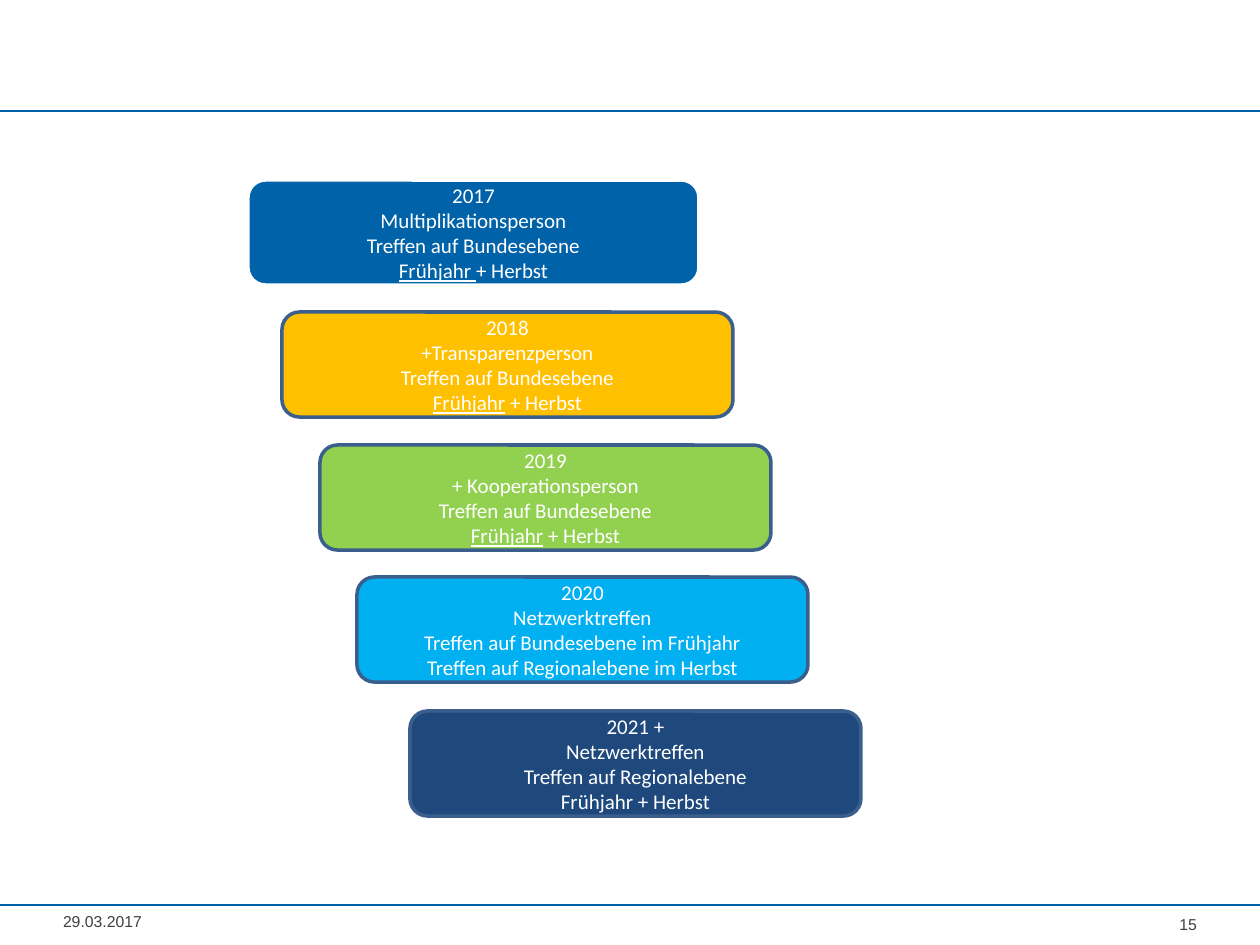
from lxml.etree import SubElement
from pptx import Presentation
from pptx.dml.color import RGBColor
from pptx.enum.shapes import MSO_CONNECTOR, MSO_SHAPE
from pptx.enum.text import MSO_ANCHOR, PP_ALIGN
from pptx.oxml.ns import qn
from pptx.util import Emu, Pt

WIDE, HIGH = 1260, 945
RULES = (111, 905)
COLORS = {
    "blue": "0062A9", "amber": "FFC000", "green": "92D050", "sky": "00B0F0",
    "navy": "1F497D", "edge": "3A5F8C", "white": "FFFFFF", "gray": "404040",
}
SPRING = "Frühjahr"
FEDERAL = "Treffen auf Bundesebene"
REGION = "Treffen auf Regionalebene"
NETWORK = "Netzwerktreffen"
CARD = (451, 105)
# left, top, fill, edge, lines, underlined start of the last line
STEPS = [
    (248, 180, "blue", "white",
     ["2017", "Multiplikationsperson", FEDERAL], SPRING + " ", "+ Herbst"),
    (282, 312, "amber", "edge",
     ["2018", "+Transparenzperson", FEDERAL], SPRING, " + Herbst"),
    (320, 445, "green", "edge",
     ["2019", "+ Kooperationsperson", FEDERAL], SPRING, " + Herbst"),
    (357, 577, "sky", "edge",
     ["2020", NETWORK, FEDERAL + " im Frühjahr"], "", REGION + " im Herbst"),
    (410, 711, "navy", "edge",
     ["2021 +", NETWORK, REGION], "", "Frühjahr + Herbst"),
]


def px(count):
    return Emu(round(count * 914400 / 126))


def color(name):
    return RGBColor.from_string(COLORS[name])


def style(para, face, size, tint, align):
    para.alignment = align
    para.font.name = face
    para.font.size = Pt(size)
    para.font.color.rgb = color(tint)


def add_rule(slide, top):
    rule = slide.shapes.add_connector(
        MSO_CONNECTOR.STRAIGHT, 0, px(top), px(WIDE), px(top))
    rule.line.color.rgb = color("blue")
    rule.line.width = Pt(1)
    SubElement(rule._element.spPr, qn("a:effectLst"))


def add_note(slide, box, text, align):
    """Place one small footer text."""
    frame = slide.shapes.add_textbox(*map(px, box)).text_frame
    frame.word_wrap = True
    frame.vertical_anchor = MSO_ANCHOR.MIDDLE
    frame.margin_left = frame.margin_right = 0
    frame.margin_top = frame.margin_bottom = 0
    para = frame.paragraphs[0]
    para.text = text
    style(para, "Arial", 9, "gray", align)


def add_step(slide, box, fill, edge, lines, marked, rest):
    """Place one year card; its last line is marked (underlined) plus rest."""
    card = slide.shapes.add_shape(MSO_SHAPE.ROUNDED_RECTANGLE, *map(px, box))
    card.shadow.inherit = False
    card.fill.solid()
    card.fill.fore_color.rgb = color(fill)
    card.line.color.rgb = color(edge)
    card.line.width = Pt(2)
    frame = card.text_frame
    frame.word_wrap = True
    frame.vertical_anchor = MSO_ANCHOR.MIDDLE
    frame.text = "\n".join(lines)
    last = frame.add_paragraph()
    if marked:
        run = last.add_run()
        run.text = marked
        run.font.underline = True
    last.add_run().text = rest
    for para in frame.paragraphs:
        style(para, "Calibri", 12, "white", PP_ALIGN.CENTER)


def main():
    deck = Presentation()
    deck.slide_width, deck.slide_height = px(WIDE), px(HIGH)
    slide = deck.slides.add_slide(deck.slide_layouts[6])
    for top in RULES:
        add_rule(slide, top)
    add_note(slide, (63, 905, 145, 33), "29.03.2017", PP_ALIGN.LEFT)
    add_note(slide, (1111, 905, 86, 38), "15", PP_ALIGN.RIGHT)
    for left, top, *parts in STEPS:
        add_step(slide, (left, top, *CARD), *parts)
    deck.save("out.pptx")


if __name__ == "__main__":
    main()
